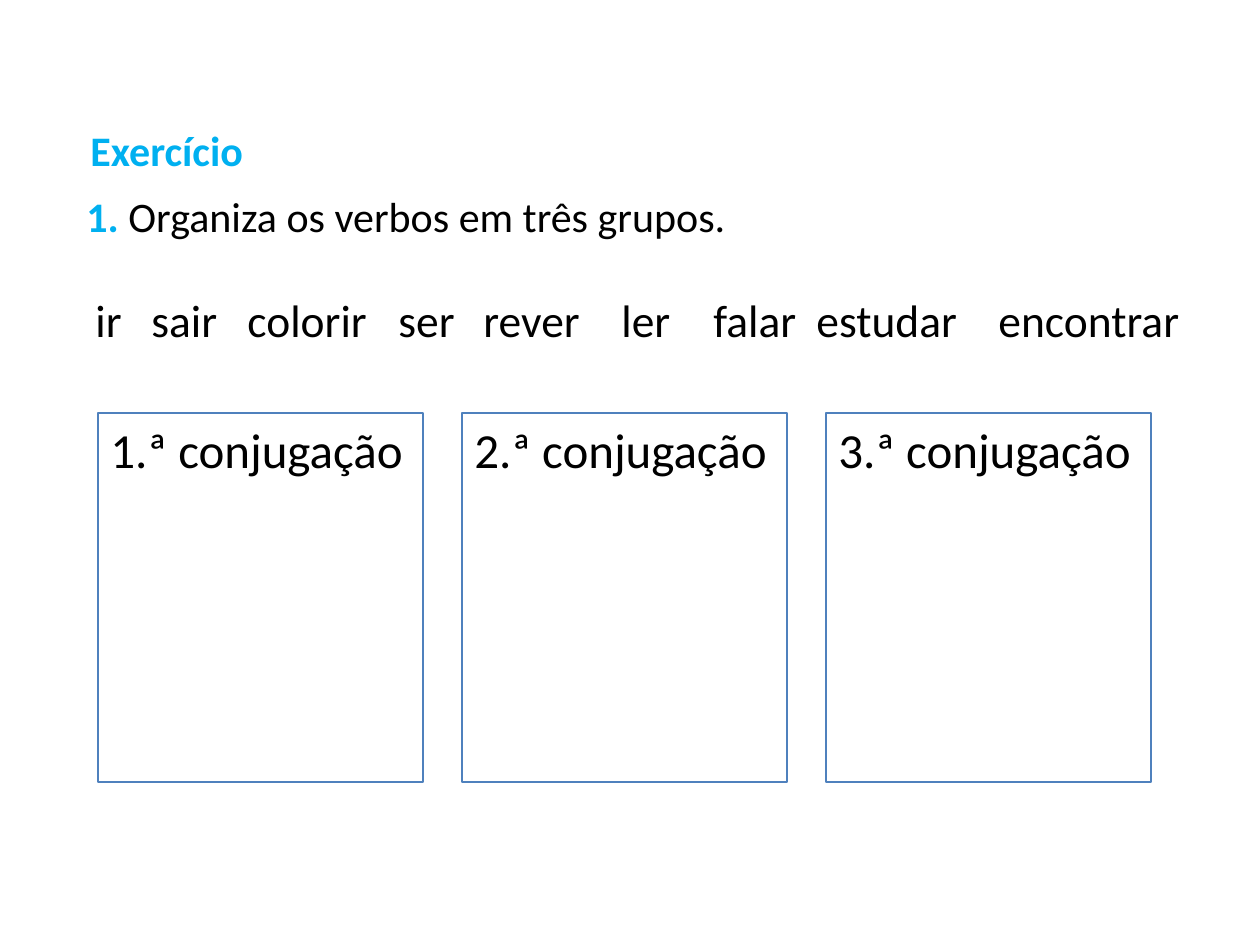
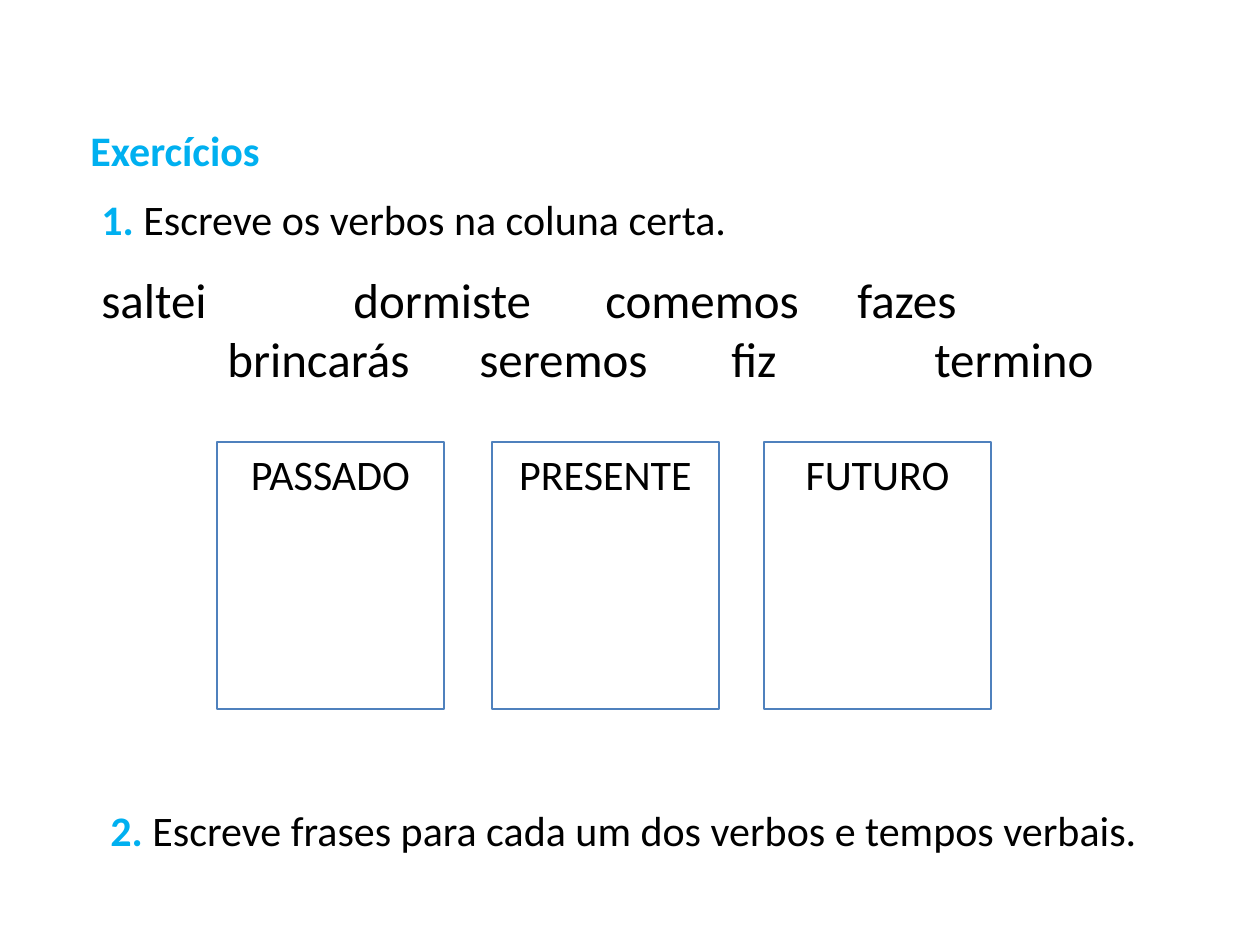
from dataclasses import dataclass

import lxml.etree
import pptx
import pptx.dml.color
import pptx.enum.shapes
import pptx.enum.text
import pptx.oxml.ns
import pptx.util

EMU_PER_PX = 914400 / 126
SLIDE_WIDTH, SLIDE_HEIGHT = 1260, 945
ALIGN = pptx.enum.text.PP_ALIGN


@dataclass(frozen=True)
class Theme:
    font: str = "Calibri"
    accent: str = "00B0F0"
    ink: str = "000000"
    border: str = "4F81BD"
    border_width: float = 1.5
    body_size: int = 24
    verb_size: int = 26
    large_size: int = 28


@dataclass(frozen=True)
class Area:
    left: int
    top: int
    width: int
    height: int


@dataclass(frozen=True)
class Task:
    number: str
    instruction: str


@dataclass(frozen=True)
class VerbLine:
    verbs: tuple[str, ...]
    stops: tuple[int, ...]
    size: int
    gap_above: int = 0
    starts_with_tab: bool = True


@dataclass(frozen=True)
class ColumnRow:
    headings: tuple[str, ...]
    lefts: tuple[int, ...]
    top: int
    width: int
    height: int
    size: int
    alignment: ALIGN


THEME = Theme()
TITLE_AREA = Area(78, 118, 197, 63)


def px(length: int) -> pptx.util.Emu:
    return pptx.util.Emu(round(length * EMU_PER_PX))


def color(value: str) -> pptx.dml.color.RGBColor:
    return pptx.dml.color.RGBColor.from_string(value)


def style(paragraph, size: int, ink: str = THEME.ink, bold: bool = False) -> None:
    paragraph.font.name = THEME.font
    paragraph.font.size = pptx.util.Pt(size)
    paragraph.font.color.rgb = color(ink)
    paragraph.font.bold = bold


def add_text_frame(slide, area: Area):
    box = slide.shapes.add_textbox(px(area.left), px(area.top), px(area.width), px(area.height))
    box.text_frame.word_wrap = True
    return box.text_frame


def add_title(slide, title: str) -> None:
    paragraph = add_text_frame(slide, TITLE_AREA).paragraphs[0]
    paragraph.text = title
    style(paragraph, THEME.body_size, THEME.accent, True)


def add_tab_stops(paragraph, stops: tuple[int, ...]) -> None:
    properties = paragraph._p.get_or_add_pPr()
    tab_list = lxml.etree.SubElement(properties, pptx.oxml.ns.qn("a:tabLst"))
    for stop in stops:
        tab = lxml.etree.SubElement(tab_list, pptx.oxml.ns.qn("a:tab"))
        tab.set("pos", str(px(stop)))
        tab.set("algn", "l")


def add_task(slide, area: Area, task: Task, verb_lines: tuple[VerbLine, ...] = ()) -> None:
    text_frame = add_text_frame(slide, area)
    paragraph = text_frame.paragraphs[0]
    number = paragraph.add_run()
    number.text = f"{task.number} "
    number.font.bold = True
    number.font.color.rgb = color(THEME.accent)
    paragraph.add_run().text = task.instruction
    style(paragraph, THEME.body_size)
    for line in verb_lines:
        paragraph = text_frame.add_paragraph()
        add_tab_stops(paragraph, line.stops)
        paragraph.space_before = px(line.gap_above)
        paragraph.add_run().text = "\t" * line.starts_with_tab + "\t".join(line.verbs)
        style(paragraph, line.size)


def add_columns(slide, row: ColumnRow) -> None:
    for heading, left in zip(row.headings, row.lefts):
        column = slide.shapes.add_shape(
            pptx.enum.shapes.MSO_SHAPE.RECTANGLE,
            px(left), px(row.top), px(row.width), px(row.height),
        )
        column.shadow.inherit = False
        column.fill.background()
        column.line.color.rgb = color(THEME.border)
        column.line.width = pptx.util.Pt(THEME.border_width)
        column.text_frame.word_wrap = True
        column.text_frame.vertical_anchor = pptx.enum.text.MSO_ANCHOR.TOP
        paragraph = column.text_frame.paragraphs[0]
        paragraph.text = heading
        paragraph.alignment = row.alignment
        style(paragraph, row.size)


def build_conjugations(slide) -> None:
    add_title(slide, "Exercício")
    verbs = VerbLine(
        ("ir", "sair", "colorir", "ser", "rever", "ler", "falar", "estudar", "encontrar"),
        (9, 65, 161, 312, 397, 535, 627, 730, 912),
        THEME.verb_size,
        gap_above=51,
    )
    add_task(slide, Area(74, 184, 1280, 170),
             Task("1.", "Organiza os verbos em três grupos."), (verbs,))
    add_columns(slide, ColumnRow(
        tuple(f"{number}.ª conjugação" for number in range(1, 4)),
        tuple(98 + 364 * index for index in range(3)),
        413, 325, 369, THEME.large_size, ALIGN.LEFT,
    ))


def build_tenses(slide) -> None:
    add_title(slide, "Exercícios")
    verb_lines = (
        VerbLine(("saltei", "dormiste", "comemos", "fazes"), (252, 504, 756),
                 THEME.large_size, gap_above=26, starts_with_tab=False),
        VerbLine(("brincarás", "seremos", "fiz", "termino"), (126, 378, 630, 833),
                 THEME.large_size),
    )
    add_task(slide, Area(89, 187, 1072, 208),
             Task("1.", "Escreve os verbos na coluna certa."), verb_lines)
    add_task(slide, Area(98, 798, 1074, 63),
             Task("2.", "Escreve frases para cada um dos verbos e tempos verbais."))
    add_columns(slide, ColumnRow(
        ("PASSADO", "PRESENTE", "FUTURO"), (217, 492, 764),
        442, 227, 267, THEME.body_size, ALIGN.CENTER,
    ))


def main() -> None:
    presentation = pptx.Presentation()
    presentation.slide_width = px(SLIDE_WIDTH)
    presentation.slide_height = px(SLIDE_HEIGHT)
    blank_layout = presentation.slide_layouts[6]
    for build in (build_conjugations, build_tenses):
        build(presentation.slides.add_slide(blank_layout))
    presentation.save("out.pptx")


if __name__ == "__main__":
    main()
